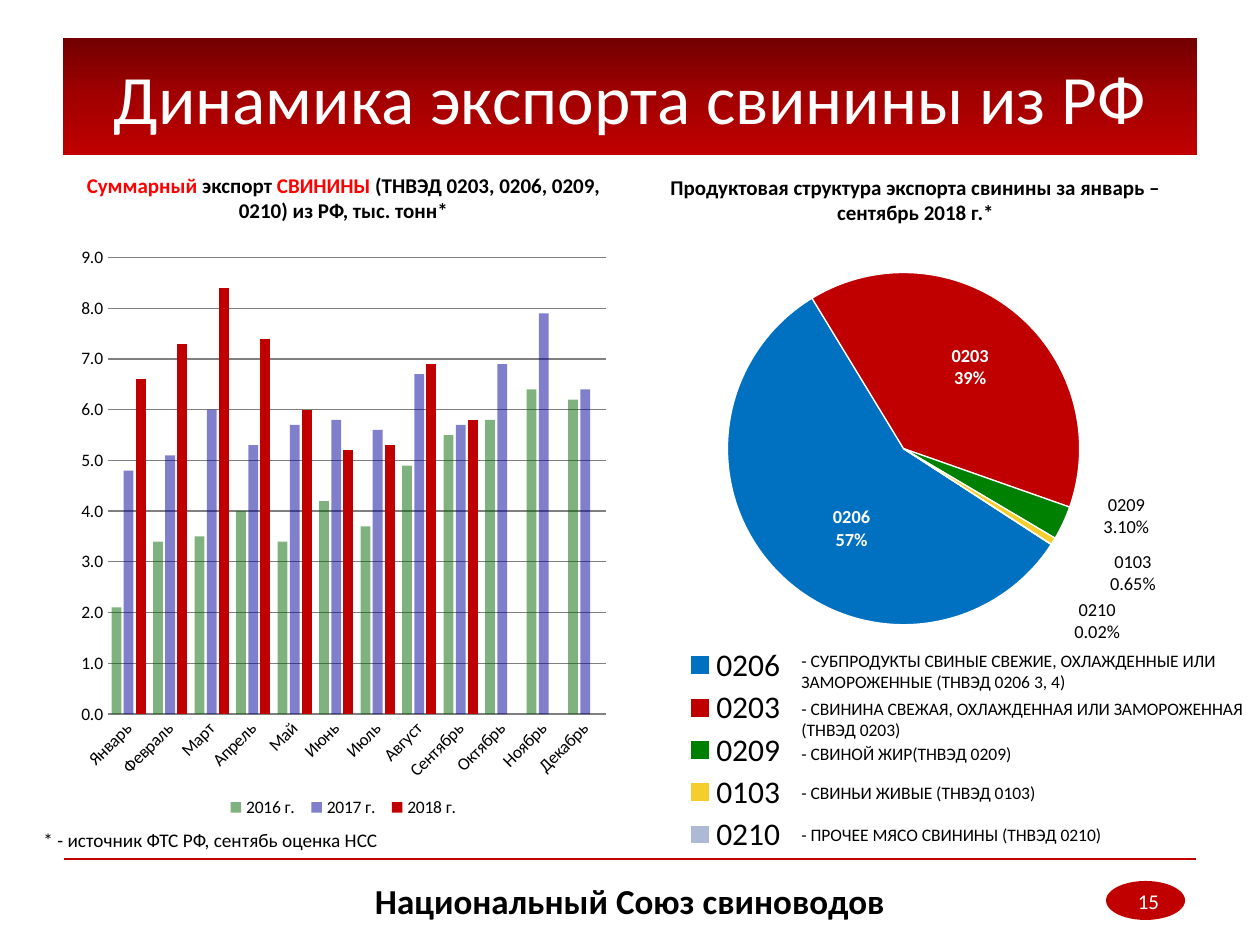
from copy import deepcopy

from lxml import etree
from pptx import Presentation
from pptx.chart.data import CategoryChartData
from pptx.dml.color import RGBColor
from pptx.enum.chart import XL_CHART_TYPE as ChartType, XL_LEGEND_POSITION as LegendPosition
from pptx.enum.chart import XL_TICK_MARK as TickMark
from pptx.enum.shapes import MSO_CONNECTOR as Connector, MSO_SHAPE as Shape
from pptx.enum.text import MSO_ANCHOR as Anchor, MSO_AUTO_SIZE as AutoSize, PP_ALIGN as Align
from pptx.oxml import parse_xml
from pptx.oxml.ns import nsdecls, qn
from pptx.util import Emu, Pt

FONT = "Calibri"
RED, BLACK, WHITE, ACCENT, GRAY = "C00000", "000000", "FFFFFF", "FF0000", "808080"
MONTHS = ["Январь", "Февраль", "Март", "Апрель", "Май", "Июнь", "Июль", "Август",
          "Сентябрь", "Октябрь", "Ноябрь", "Декабрь"]
EXPORTS = {  # year: (values, colour, opacity in percent)
    "2016 г.": ([2.1, 3.4, 3.5, 4, 3.4, 4.2, 3.7, 4.9, 5.5, 5.8, 6.4, 6.2], "006600", 50),
    "2017 г.": ([4.8, 5.1, 6, 5.3, 5.7, 5.8, 5.6, 6.7, 5.7, 6.9, 7.9, 6.4], "000099", 50),
    "2018 г.": ([6.6, 7.3, 8.4, 7.4, 6, 5.2, 5.3, 6.9, 5.8, None, None, None], RED, 100),
}
PRODUCTS = [  # code, share in percent, colour, label format, label offset, label position
    ("0206", 57, "0070C0", r"0\%", (0.02, 0.03), "ctr"),
    ("0203", 39, RED, r"0\%", (0.02, -0.02), "ctr"),
    ("0209", 3.1, "008000", r"0.00\%", (0.06, -0.05), "outEnd"),
    ("0103", 0.65, "F5CD2D", r"0.00\%", (0.09, 0.01), "outEnd"),
    ("0210", 0.02, "AEBAD5", r"0.00\%", (0.03, 0.08), "outEnd"),
]
DESCRIPTIONS = [  # top, height, text
    (644, 55, "- СУБПРОДУКТЫ СВИНЫЕ СВЕЖИЕ, ОХЛАЖДЕННЫЕ ИЛИ ЗАМОРОЖЕННЫЕ (ТНВЭД 0206 3, 4)"),
    (692, 55, "- СВИНИНА СВЕЖАЯ, ОХЛАЖДЕННАЯ ИЛИ ЗАМОРОЖЕННАЯ (ТНВЭД 0203)"),
    (737, 34, "- СВИНОЙ ЖИР(ТНВЭД 0209)"),
    (776, 34, "- СВИНЬИ ЖИВЫЕ (ТНВЭД 0103)"),
    (818, 34, "- ПРОЧЕЕ МЯСО СВИНИНЫ (ТНВЭД 0210)"),
]


def px(value):
    return Emu(round(value * 914400 / 126))


def rgb(color):
    return RGBColor.from_string(color)


def place(shape, left, top, width, height):
    shape.left, shape.top, shape.width, shape.height = map(px, (left, top, width, height))


def write(shape, runs, size, color=BLACK, bold=False, align=Align.LEFT, anchor=Anchor.TOP):
    """Fill a shape with one paragraph; runs is a string or (text, colour) pairs."""
    frame = shape.text_frame
    frame.word_wrap = True
    frame.auto_size = AutoSize.NONE
    frame.vertical_anchor = anchor
    paragraph = frame.paragraphs[0]
    paragraph.alignment = align
    paragraph.space_before = Pt(0)
    for text, run_color in [(runs, color)] if isinstance(runs, str) else runs:
        run = paragraph.add_run()
        run.text = text
        font = run.font
        font.name, font.size, font.bold = FONT, Pt(size), bold
        font.color.rgb = rgb(run_color)


def add_text(slide, box, text, size, **format_options):
    shape = slide.shapes.add_textbox(*map(px, box))
    write(shape, text, size, **format_options)


def fill_title(title, text):
    place(title, 63, 38, 1134, 117)
    title.fill.gradient()
    title.fill.gradient_angle = 270
    first, last = title.fill.gradient_stops
    first.color.rgb, last.color.rgb = rgb("720000"), rgb(RED)
    stop_list = title.element.spPr.find(".//" + qn("a:gsLst"))
    stop_list.insert(1, deepcopy(stop_list[0]))
    middle = title.fill.gradient_stops[1]
    middle.position, middle.color.rgb = 0.5, rgb("A20000")
    write(title, text, 39.6, color=WHITE, align=Align.CENTER, anchor=Anchor.MIDDLE)


def add_footer(slide):
    rule = slide.shapes.add_connector(Connector.STRAIGHT, px(64), px(859), px(1196), px(859))
    rule.line.color.rgb, rule.line.width = rgb(RED), Pt(1.5)
    etree.SubElement(rule.element.spPr, qn("a:effectLst"))
    badge = slide.shapes.add_shape(Shape.OVAL, *map(px, (1106, 881, 79, 39)))
    badge.shadow.inherit = False
    badge.fill.solid()
    badge.fill.fore_color.rgb = rgb(RED)
    badge.line.fill.background()
    centered = dict(align=Align.CENTER, anchor=Anchor.MIDDLE)
    add_text(slide, (228, 876, 804, 50), "Национальный Союз свиноводов", 20, bold=True, **centered)
    add_text(slide, (1086, 876, 125, 50), "15", 12, color=WHITE, **centered)


def set_layout(element, x, y, width, height, inner=False):
    """Give a plot area or a legend a fixed place, in fractions of the chart."""
    for old in element.findall(qn("c:layout")):
        element.remove(old)
    target = '<c:layoutTarget val="inner"/>' if inner else ""
    layout = parse_xml(
        f'<c:layout {nsdecls("c")}><c:manualLayout>{target}<c:xMode val="edge"/>'
        f'<c:yMode val="edge"/><c:x val="{x}"/><c:y val="{y}"/><c:w val="{width}"/>'
        f'<c:h val="{height}"/></c:manualLayout></c:layout>')
    if inner:
        element.insert(0, layout)
    else:
        element.find(qn("c:legendPos")).addnext(layout)


def add_chart(slide, kind, box, data, plot_box, legend_position, legend_box, size):
    chart = slide.shapes.add_chart(kind, *map(px, box), data).chart
    chart.has_title = False
    chart.font.name, chart.font.size = FONT, Pt(size)
    chart.font.color.rgb = rgb(BLACK)
    chart.has_legend = True
    chart.legend.position = legend_position
    chart.legend.include_in_layout = False
    set_layout(chart.legend._element, *legend_box)
    set_layout(chart.element.find(".//" + qn("c:plotArea")), *plot_box, inner=True)
    return chart


def paint(chart_format, color, opacity=100):
    chart_format.fill.solid()
    chart_format.fill.fore_color.rgb = rgb(color)
    if opacity < 100:
        color_element = chart_format.fill._xPr.find(".//" + qn("a:srgbClr"))
        etree.SubElement(color_element, qn("a:alpha")).set("val", str(opacity * 1000))


def add_export_chart(slide):
    data = CategoryChartData(number_format="#,##0.0")
    data.categories = MONTHS
    for year, (values, _, _) in EXPORTS.items():
        data.add_series(year, values)
    chart = add_chart(slide, ChartType.COLUMN_CLUSTERED, (63, 217, 561, 635), data,
                      (0.08, 0.064, 0.888, 0.719), LegendPosition.BOTTOM,
                      (0.28, 0.9, 0.44, 0.06), 10)
    plot = chart.plots[0]
    plot.gap_width, plot.overlap, plot.vary_by_categories = 75, -25, False
    for series, (_, color, opacity) in zip(plot.series, EXPORTS.values()):
        paint(series.format, color, opacity)
    months, tons = chart.category_axis, chart.value_axis
    for axis in (months, tons):
        axis.major_tick_mark = axis.minor_tick_mark = TickMark.NONE
        axis.tick_labels.font.size = Pt(10)
    months._element.find(qn("c:txPr")).find(qn("a:bodyPr")).set("rot", "-2700000")
    tons.minimum_scale, tons.maximum_scale, tons.major_unit = 0, 9, 1
    tons.format.line.fill.background()
    tons.tick_labels.number_format = "#,##0.0"
    tons.tick_labels.number_format_is_linked = False
    for line in (months.format.line, tons.major_gridlines.format.line):
        line.color.rgb, line.width = rgb(GRAY), Pt(0.75)


def share_label(index, number_format, offset, position):
    inside = position == "ctr"
    return parse_xml(
        f'<c:dLbl {nsdecls("c", "a")}><c:idx val="{index}"/><c:layout><c:manualLayout>'
        f'<c:x val="{offset[0]}"/><c:y val="{offset[1]}"/></c:manualLayout></c:layout>'
        f'<c:numFmt formatCode="{number_format}" sourceLinked="0"/><c:spPr><a:noFill/></c:spPr>'
        f'<c:txPr><a:bodyPr/><a:p><a:pPr><a:defRPr sz="1050" b="{int(inside)}"><a:solidFill>'
        f'<a:srgbClr val="{WHITE if inside else BLACK}"/></a:solidFill><a:latin typeface="{FONT}"/>'
        f'</a:defRPr></a:pPr><a:endParaRPr lang="ru-RU"/></a:p></c:txPr>'
        f'<c:dLblPos val="{position}"/><c:showLegendKey val="0"/><c:showVal val="1"/>'
        f'<c:showCatName val="1"/><c:showSerName val="0"/><c:showPercent val="0"/>'
        f'<c:showBubbleSize val="0"/><c:separator>\n</c:separator></c:dLbl>')


def add_product_chart(slide):
    data = CategoryChartData()
    data.categories = [product[0] for product in PRODUCTS]
    data.add_series("Series 1", [product[1] for product in PRODUCTS])
    chart = add_chart(slide, ChartType.PIE, (640, 223, 561, 635), data,
                      (0.156, 0.078, 0.628, 0.555), LegendPosition.RIGHT,
                      (0.08, 0.66, 0.18, 0.34), 18)
    plot = chart.plots[0]
    plot.vary_by_categories = True
    pie = plot._element
    for old in pie.findall(qn("c:firstSliceAng")):
        pie.remove(old)
    etree.SubElement(pie, qn("c:firstSliceAng")).set("val", "123")
    series = plot.series[0]
    labels = series.data_labels
    labels.show_value = labels.show_category_name = True
    for leader_lines in labels._element.findall(qn("c:showLeaderLines")):
        leader_lines.set("val", "0")
    for index, (_, _, color, *label_options) in enumerate(PRODUCTS):
        point_format = series.points[index].format
        paint(point_format, color)
        point_format.line.color.rgb = rgb(WHITE)
        point_format.line.width = Pt(0.75)
        labels._element.insert(index, share_label(index, *label_options))


def main():
    presentation = Presentation()
    presentation.slide_width, presentation.slide_height = px(1260), px(945)
    slide = presentation.slides.add_slide(presentation.slide_layouts[4])
    holders = {holder.placeholder_format.idx: holder for holder in slide.placeholders}
    for idx in (2, 4):
        holders[idx].element.getparent().remove(holders[idx].element)
    add_footer(slide)
    add_product_chart(slide)
    fill_title(slide.shapes.title, "Динамика экспорта свинины из РФ")
    heading = dict(size=12, bold=True, align=Align.CENTER, anchor=Anchor.MIDDLE)
    place(holders[1], 65, 154, 557, 88)
    write(holders[1], [("Суммарный", ACCENT), (" экспорт ", BLACK), ("СВИНИНЫ ", ACCENT),
                       ("(ТНВЭД 0203, 0206, 0209, 0210) из РФ, тыс. тонн*", BLACK)], **heading)
    add_export_chart(slide)
    place(holders[3], 637, 156, 557, 88)
    write(holders[3], "Продуктовая структура экспорта свинины за январь – сентябрь 2018 г.*", **heading)
    for top, height, text in DESCRIPTIONS:
        add_text(slide, (789, top, 471, height), text, 10)
    add_text(slide, (31, 822, 400, 36), "* - источник ФТС РФ, сентябь оценка НСС", 11)
    presentation.save("out.pptx")


if __name__ == "__main__":
    main()
